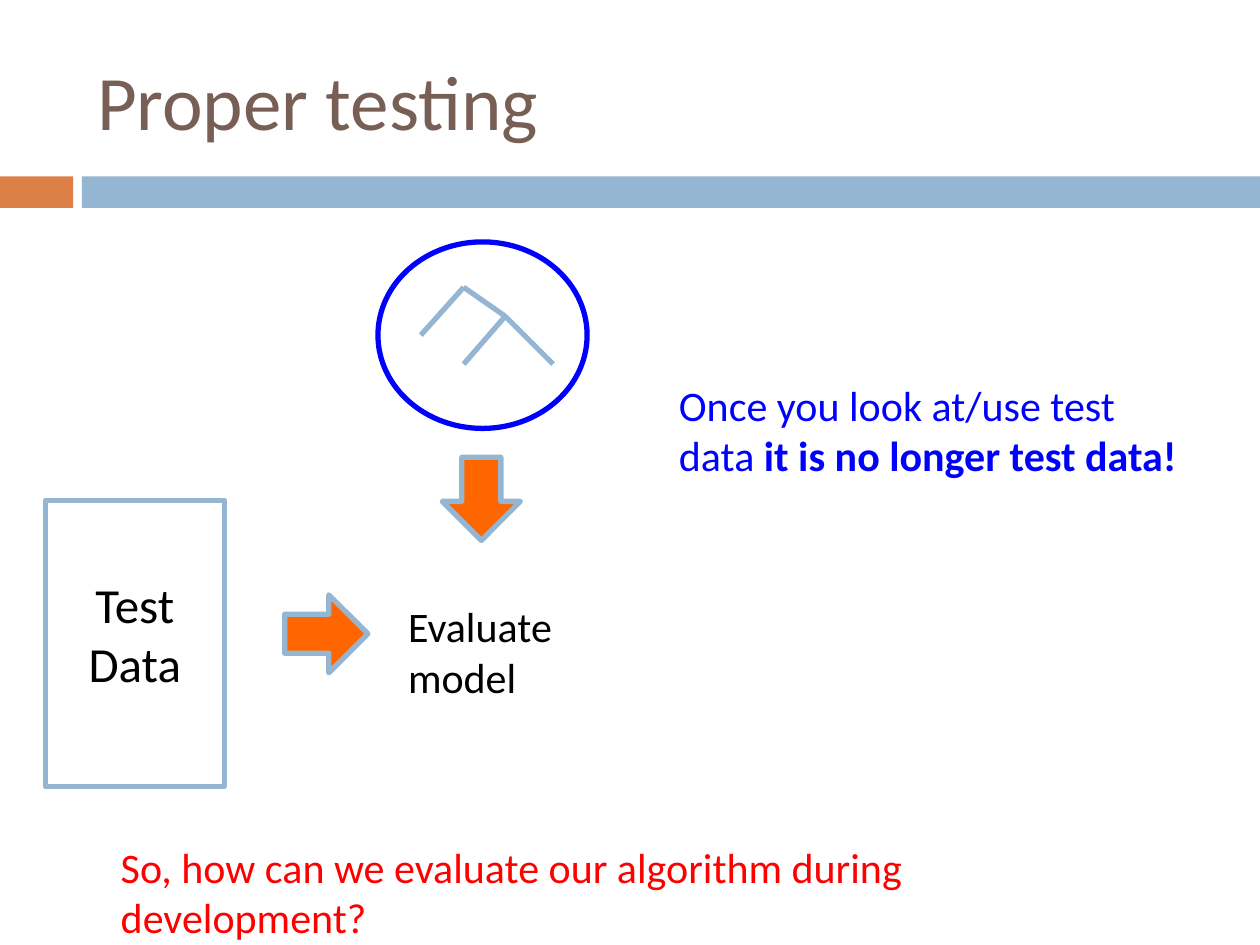
from pptx import Presentation
from pptx.dml.color import RGBColor as RGB
from pptx.enum.shapes import MSO_CONNECTOR as Link, MSO_SHAPE as Kind
from pptx.enum.text import MSO_ANCHOR as Anchor, MSO_AUTO_SIZE as Fit, PP_ALIGN as Align
from pptx.oxml.ns import qn
from pptx.util import Inches, Pt
from lxml import etree

BLACK = RGB(0x00, 0x00, 0x00)
BLUE = RGB(0x00, 0x00, 0xFF)
RED = RGB(0xFF, 0x00, 0x00)
BROWN = RGB(0x77, 0x5F, 0x55)
SKY = RGB(0x94, 0xB6, 0xD2)
RUST = RGB(0xDD, 0x80, 0x47)
ORANGE = RGB(0xFF, 0x66, 0x00)
COLS, ROWS = 10, 7.5  # grid of square cells


class Deck:
    font = "Calibri"
    stroke = Pt(3)

    def __init__(self):
        self.prs = Presentation()
        self.prs.slide_width, self.prs.slide_height = Inches(10), Inches(7.5)
        self.slide = self.prs.slides.add_slide(self.prs.slide_layouts[5])
        self.shapes = self.slide.shapes

    def grid(self, *cells):
        """Turn alternating columns and rows into lengths."""
        units = self.prs.slide_width / COLS, self.prs.slide_height / ROWS
        return [round(cell * units[i % 2]) for i, cell in enumerate(cells)]

    def style(self, par, size, color, align=Align.LEFT):
        par.alignment = align
        par.font.name, par.font.size = self.font, Pt(size)
        par.font.color.rgb = color

    def title(self, text, box):
        head = self.shapes.title
        head.left, head.top, head.width, head.height = self.grid(*box)
        head.text_frame.text = text
        head.text_frame.vertical_anchor = Anchor.MIDDLE
        self.style(head.text_frame.paragraphs[0], 44, BROWN)

    def shape(self, kind, box, fill=None, line=None, turn=0):
        item = self.shapes.add_shape(kind, *self.grid(*box))
        item.shadow.inherit = False
        item.rotation = turn
        if fill is None:
            item.fill.background()
        else:
            item.fill.solid()
            item.fill.fore_color.rgb = fill
        if line is None:
            item.line.fill.background()
        else:
            item.line.color.rgb, item.line.width = line, self.stroke

    def line(self, start, end):
        item = self.shapes.add_connector(Link.STRAIGHT, *self.grid(*start, *end))
        item.line.color.rgb, item.line.width = SKY, self.stroke
        etree.SubElement(item._element.spPr, qn("a:effectLst"))

    def text(self, box, pars, size=24, color=BLACK, align=Align.LEFT):
        """Each paragraph is a list of (words, bold) runs."""
        frame = self.shapes.add_textbox(*self.grid(*box)).text_frame
        frame.word_wrap, frame.auto_size = True, Fit.SHAPE_TO_FIT_TEXT
        for i, runs in enumerate(pars):
            par = frame.add_paragraph() if i else frame.paragraphs[0]
            self.style(par, size, color, align)
            for words, bold in runs:
                run = par.add_run()
                run.text = words
                if bold:
                    run.font.bold = True


def main():
    deck = Deck()

    # Title and band
    deck.shape(Kind.RECTANGLE, (0, 1.4, 0.58, 0.25), RUST)
    deck.shape(Kind.RECTANGLE, (0.65, 1.4, 9.35, 0.25), SKY)
    deck.title("Proper testing", (0.67, 0.25, 8.92, 1.08))

    # Test data
    deck.shape(Kind.RECTANGLE, (0.36, 3.97, 1.42, 2.27), line=SKY)
    deck.text((0.58, 4.51, 0.98, 1.04), [[("Test", False)], [("Data", False)]],
              size=28, align=Align.CENTER)

    # Model: a small tree in a circle
    deck.shape(Kind.OVAL, (3, 1.92, 1.66, 1.48), line=BLUE)
    root, fork = (3.68, 2.28), (4.01, 2.51)
    deck.line(root, fork)
    for start, leaf in ((fork, (3.68, 2.89)), (fork, (4.39, 2.89)), (root, (3.34, 2.66))):
        deck.line(start, leaf)

    # Arrows to the evaluation
    for left, top, turn in ((3.49, 3.65, 90), (2.26, 4.72, 0)):
        deck.shape(Kind.RIGHT_ARROW, (left, top, 0.66, 0.62), ORANGE, SKY, turn)
    deck.text((3.14, 4.72, 2.2, 0.9), [[("Evaluate model", False)]])

    # Remarks
    deck.text((5.29, 2.96, 4.29, 0.91),
              [[("Once you look at/use test data ", False),
                ("it is no longer test data!", True)]], color=BLUE)
    deck.text((0.86, 6.63, 8.28, 0.9),
              [[("So, how can we evaluate our algorithm during development?", False)]],
              color=RED)

    deck.prs.save("out.pptx")


if __name__ == "__main__":
    main()
